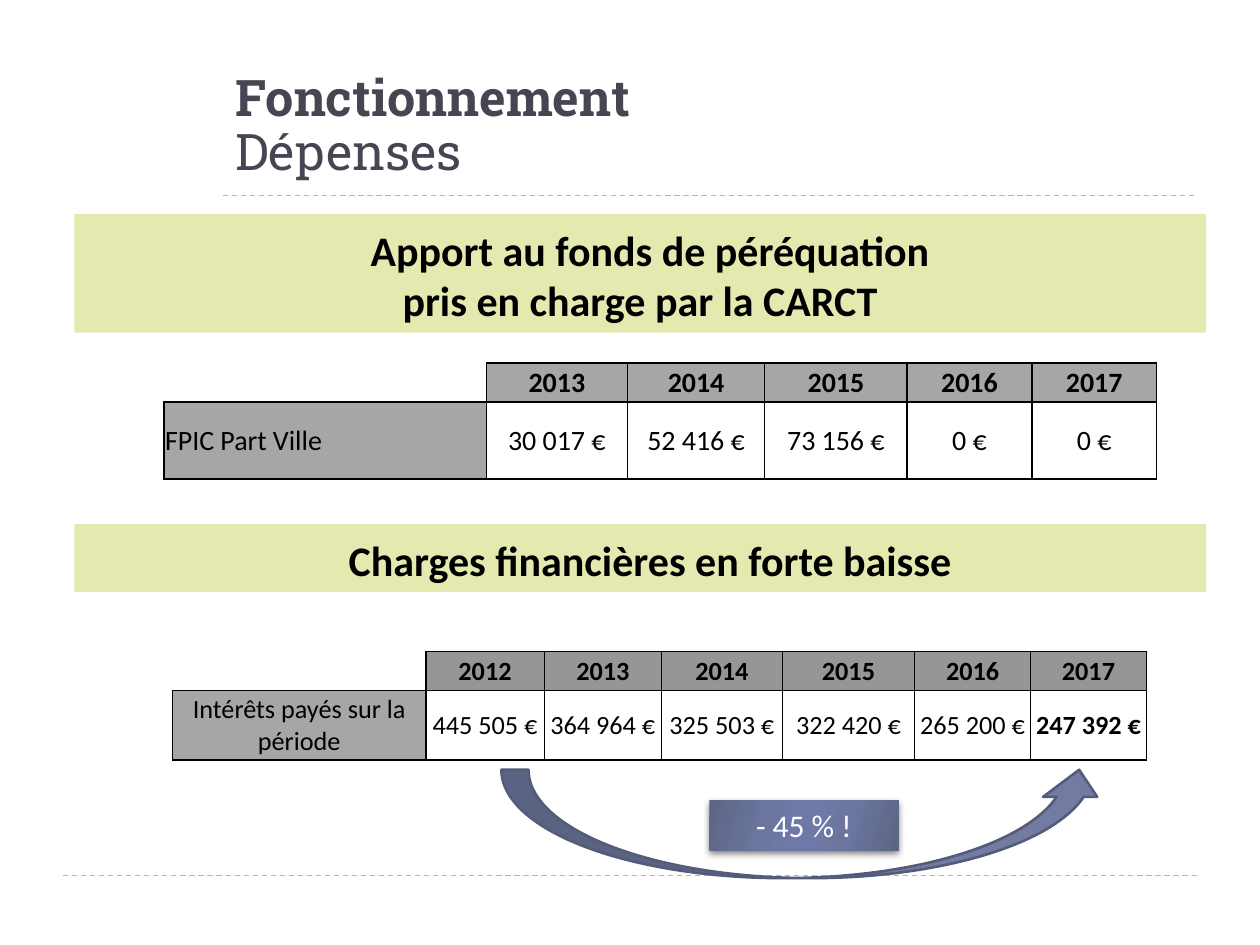
from lxml.etree import SubElement
from pptx import Presentation
from pptx.dml.color import RGBColor
from pptx.enum.dml import MSO_LINE
from pptx.enum.shapes import MSO_CONNECTOR, MSO_SHAPE
from pptx.enum.text import MSO_ANCHOR, PP_ALIGN
from pptx.oxml.ns import qn
from pptx.util import Inches, Pt

COLOURS = {
    "title": "464653", "rule": "9FB8CD", "band": "E4E9AF", "black": "000000",
    "white": "FFFFFF", "label": "A6A6A6", "dark_header": "969696",
    "arrow": "727CA3", "arrow_edge": "545C79",
    "badge_edge": "5D6585", "badge_mid": "6B759E", "badge_centre": "6E79A7",
}
BADGE_STOPS = [(0, "badge_edge"), (30, "badge_mid"), (45, "badge_centre"),
               (55, "badge_centre"), (73, "badge_mid"), (100, "badge_edge")]


def colour(name):
    return RGBColor.from_string(COLOURS[name])


def write_text(paragraph, text, size, color="black", bold=False, font="Calibri", align=PP_ALIGN.CENTER):
    paragraph.alignment = align
    run = paragraph.add_run()
    run.text = text
    run.font.size = Pt(size)
    run.font.name = font
    run.font.bold = bold
    run.font.color.rgb = colour(color)


def set_margins(target, left, top, right, bottom):
    target.margin_left, target.margin_top = Inches(left), Inches(top)
    target.margin_right, target.margin_bottom = Inches(right), Inches(bottom)


def add_rule(slide, left, top, width):
    connector = slide.shapes.add_connector(
        MSO_CONNECTOR.STRAIGHT, Inches(left), Inches(top), Inches(left + width), Inches(top))
    connector.line.color.rgb = colour("rule")
    connector.line.width = Pt(0.75)
    connector.line.dash_style = MSO_LINE.DASH
    SubElement(connector._element.spPr, qn("a:effectLst"))


def add_title(slide, left, top, width, height):
    shape = slide.shapes.add_textbox(Inches(left), Inches(top), Inches(width), Inches(height))
    frame = shape.text_frame
    frame.word_wrap = True
    frame.vertical_anchor = MSO_ANCHOR.BOTTOM
    set_margins(frame, 0.1, 0.05, 0.1, 0.02)
    paragraph = frame.paragraphs[0]
    paragraph.line_spacing = 0.9
    style = dict(size=28.8, color="title", font="Roboto Slab", align=PP_ALIGN.LEFT)
    write_text(paragraph, "Fonctionnement", bold=True, **style)
    paragraph.add_line_break()
    write_text(paragraph, "Dépenses", **style)


def add_plain_shape(slide, kind, left, top, width, height):
    shape = slide.shapes.add_shape(kind, Inches(left), Inches(top), Inches(width), Inches(height))
    shape.shadow.inherit = False
    shape.line.fill.background()
    return shape


def add_band(slide, left, top, width, height, lines):
    shape = add_plain_shape(slide, MSO_SHAPE.RECTANGLE, left, top, width, height)
    shape.fill.solid()
    shape.fill.fore_color.rgb = colour("band")
    frame = shape.text_frame
    frame.word_wrap = True
    frame.vertical_anchor = MSO_ANCHOR.TOP
    set_margins(frame, 0.1, 0.08, 0.1, 0.05)
    for index, line in enumerate(lines):
        paragraph = frame.add_paragraph() if index else frame.paragraphs[0]
        write_text(paragraph, line, size=24, bold=True)
    frame.paragraphs[0]._p.get_or_add_pPr().set("marL", str(Inches(0.16)))


def set_borders(cell, sides):
    properties = cell._tc.get_or_add_tcPr()
    for index, side in enumerate(("L", "R", "T", "B")):
        line = properties.makeelement(qn(f"a:ln{side}"), {"w": str(Pt(1))})
        if side in sides:
            fill = SubElement(line, qn("a:solidFill"))
            SubElement(fill, qn("a:srgbClr"), val=COLOURS["black"])
        else:
            SubElement(line, qn("a:noFill"))
        properties.insert(index, line)


def add_year_table(slide, left, top, columns, heights, rows, size, header, label_align, bold_cells=()):
    frame = slide.shapes.add_table(
        len(rows), len(columns), Inches(left), Inches(top), Inches(sum(columns)), Inches(sum(heights)))
    table = frame.table
    table.first_row = table.horz_banding = False
    for column, width in zip(table.columns, columns):
        column.width = Inches(width)
    for row, height in zip(table.rows, heights):
        row.height = Inches(height)
    for row_index, values in enumerate(rows):
        for column_index, value in enumerate(values):
            cell = table.cell(row_index, column_index)
            cell.vertical_anchor = MSO_ANCHOR.MIDDLE
            set_margins(cell, 0.01, 0.01, 0.01, 0)
            is_label = column_index == 0
            is_header = row_index == 0
            if value and (is_header or is_label):
                cell.fill.solid()
                cell.fill.fore_color.rgb = colour(header if is_header else "label")
            else:
                cell.fill.background()
            set_borders(cell, "LRTB" if value else "RB")
            if value:
                write_text(cell.text_frame.paragraphs[0], value, size=size,
                           bold=is_header or value in bold_cells,
                           align=label_align if is_label else PP_ALIGN.CENTER)


def add_trend_arrow(slide, left, top, width, height):
    arrow = add_plain_shape(slide, MSO_SHAPE.CURVED_UP_ARROW, left, top, width, height)
    arrow.fill.solid()
    arrow.fill.fore_color.rgb = colour("arrow")
    arrow.line.color.rgb = colour("arrow_edge")
    arrow.line.width = Pt(1.5)


def add_badge(slide, left, top, width, height, text):
    badge = add_plain_shape(slide, MSO_SHAPE.RECTANGLE, left, top, width, height)
    badge.fill.gradient()
    badge.fill.gradient_angle = 344
    properties = badge._element.spPr
    stops = properties.find(qn("a:gradFill")).find(qn("a:gsLst"))
    for stop in list(stops):
        stops.remove(stop)
    for position, name in BADGE_STOPS:
        stop = SubElement(stops, qn("a:gs"), pos=str(position * 1000))
        SubElement(stop, qn("a:srgbClr"), val=COLOURS[name])
    shadow = SubElement(properties.find(qn("a:effectLst")), qn("a:outerShdw"), blurRad=str(Pt(4)),
                        dist=str(Pt(2)), dir="5400000", rotWithShape="0")
    shade = SubElement(shadow, qn("a:srgbClr"), val=COLOURS["black"])
    SubElement(shade, qn("a:alpha"), val="50000")
    frame = badge.text_frame
    frame.word_wrap = True
    frame.vertical_anchor = MSO_ANCHOR.TOP
    write_text(frame.paragraphs[0], text, size=18, color="white")


def main():
    presentation = Presentation()
    presentation.slide_width, presentation.slide_height = Inches(10), Inches(7.5)
    slide = presentation.slides.add_slide(presentation.slide_layouts[6])
    add_rule(slide, 0.5, 6.95, 9)
    add_rule(slide, 1.77, 1.55, 7.73)
    add_title(slide, 1.77, 0.38, 7.73, 1.08)
    add_band(slide, 0.59, 1.7, 8.98, 0.94,
             ["Apport au fonds de péréquation", "pris en charge par la CARCT"])
    add_band(slide, 0.59, 4.16, 8.98, 0.54, ["Charges financières en forte baisse"])
    add_year_table(
        slide, 1.3, 2.88, [2.56, 1.12, 1.09, 1.13, 0.99, 0.99], [0.3, 0.61],
        [["", "2013", "2014", "2015", "2016", "2017"],
         ["FPIC Part Ville", "30 017 €", "52 416 €", "73 156 €", "0 €", "0 €"]],
        size=16, header="label", label_align=PP_ALIGN.LEFT)
    add_year_table(
        slide, 1.37, 5.17, [2.01, 0.94, 0.93, 0.96, 1.05, 0.92, 0.92], [0.31, 0.55],
        [["", "2012", "2013", "2014", "2015", "2016", "2017"],
         ["Intérêts payés sur la période", "445 505 €", "364 964 €", "325 503 €",
          "322 420 €", "265 200 €", "247 392 €"]],
        size=15, header="dark_header", label_align=PP_ALIGN.CENTER, bold_cells=("247 392 €",))
    add_trend_arrow(slide, 3.98, 6.11, 4.8, 0.86)
    add_badge(slide, 5.63, 6.35, 1.5, 0.4, "- 45 % !")
    presentation.save("out.pptx")


if __name__ == "__main__":
    main()
